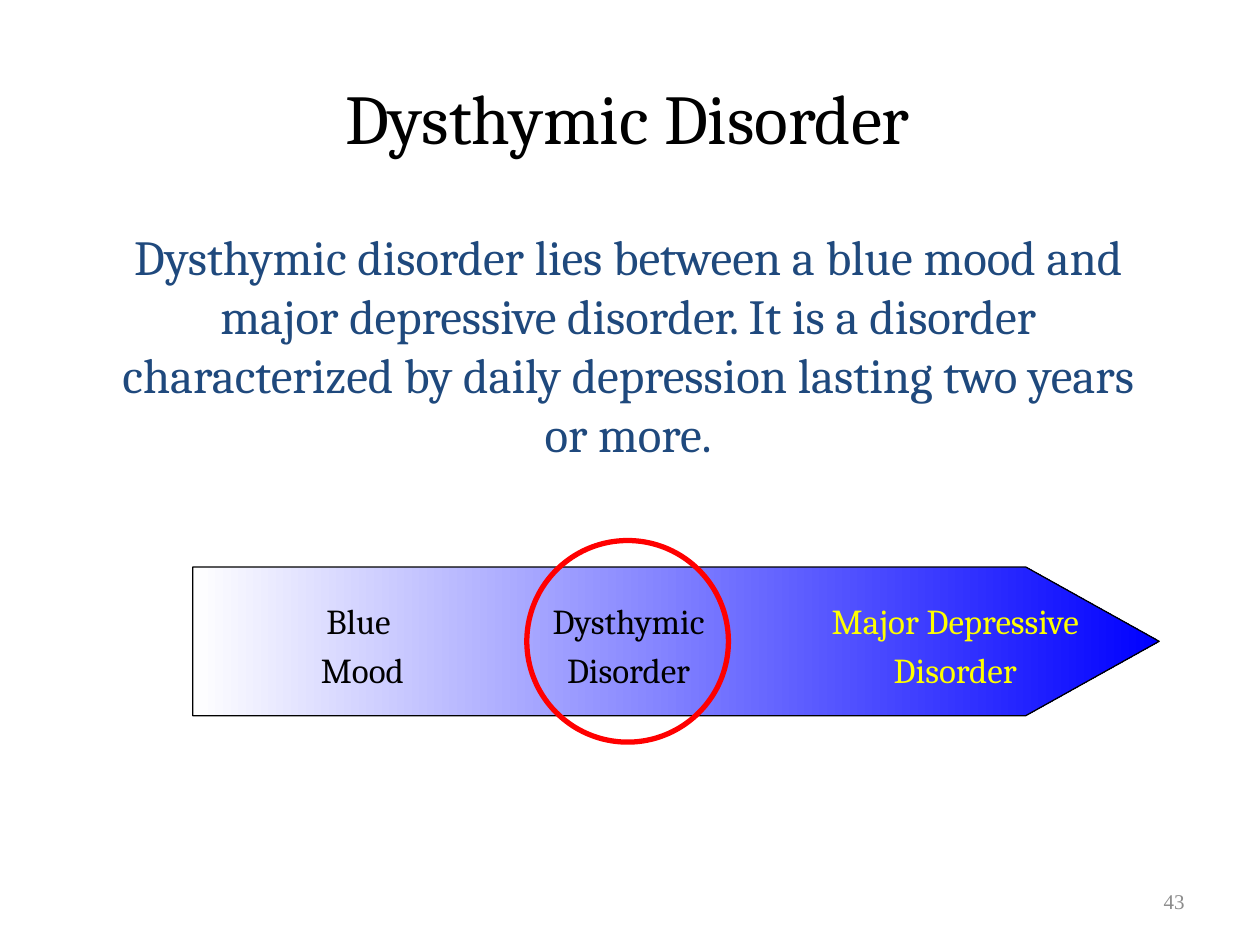
from pptx import Presentation
from pptx.dml.color import RGBColor
from pptx.enum.shapes import MSO_SHAPE
from pptx.enum.text import MSO_ANCHOR, MSO_AUTO_SIZE, PP_ALIGN
from pptx.oxml.ns import qn
from pptx.util import Inches, Pt

BLACK = RGBColor(0x00, 0x00, 0x00)
WHITE = RGBColor(0xFF, 0xFF, 0xFF)
NAVY = RGBColor(0x1F, 0x49, 0x7D)
BLUE = RGBColor(0x00, 0x00, 0xFF)
YELLOW = RGBColor(0xFF, 0xFF, 0x00)
RED = RGBColor(0xFF, 0x00, 0x00)
GRAY = RGBColor(0x8C, 0x8C, 0x8C)

# Stage label: lines, left and width as shares of the arrow, colour
STAGES = [
    (["Blue ", "Mood"], 0.094, 0.163, BLACK),
    (["Dysthymic", "Disorder"], 0.313, 0.276, BLACK),
    (["Major Depressive", "Disorder"], 0.615, 0.348, YELLOW),
]


def place(sp, box):
    sp.left, sp.top, sp.width, sp.height = (Inches(v) for v in box)


def write(sp, lines, size, color, align=PP_ALIGN.CENTER, font="Cambria",
          anchor=MSO_ANCHOR.MIDDLE, before=0):
    """Fill a shape with equally formatted paragraphs."""
    tf = sp.text_frame
    tf.word_wrap = True
    tf.auto_size = MSO_AUTO_SIZE.NONE
    tf.vertical_anchor = anchor
    tf.text = "\n".join(lines)
    for p in tf.paragraphs:
        p.alignment = align
        p.space_before = Pt(before)
        p.font.name = font
        p.font.size = Pt(size)
        p.font.color.rgb = color


def add_title(slide, box):
    title = slide.shapes.title
    place(title, box)
    write(title, ["Dysthymic Disorder"], 40, BLACK)


def add_definition(slide, box):
    body = slide.placeholders[1]
    place(body, box)
    write(body, ["Dysthymic disorder lies between a blue mood and major "
                 "depressive disorder. It is a disorder characterized by "
                 "daily depression lasting two years or more."],
          28, NAVY, anchor=MSO_ANCHOR.TOP)
    pPr = body.text_frame.paragraphs[0]._p.get_or_add_pPr()
    pPr.set("marL", "0")
    pPr.set("indent", "0")
    pPr.insert_element_before(pPr.makeelement(qn("a:buNone"), {}),
                              "a:tabLst", "a:defRPr", "a:extLst")


def add_severity_arrow(slide, box):
    """Gradient arrow with its stage labels and a ring on the middle one."""
    left, top, width, height = box
    arrow = slide.shapes.add_shape(MSO_SHAPE.PENTAGON, 0, 0, 0, 0)
    place(arrow, box)
    arrow.adjustments[0] = 0.897
    arrow.shadow.inherit = False
    arrow.fill.gradient()
    arrow.fill.gradient_angle = 0
    for stop, position, color in zip(arrow.fill.gradient_stops,
                                     (0, 1), (WHITE, BLUE)):
        stop.position = position
        stop.color.rgb = color
    arrow.line.color.rgb = BLACK
    arrow.line.width = Pt(0.75)

    for lines, x, w, color in STAGES:
        label = slide.shapes.add_textbox(0, 0, 0, 0)
        place(label, (left + x * width, top + 0.1 * height,
                      w * width, 0.85 * height))
        write(label, lines, 20, color, before=4)

    diameter = 1.6
    ring = slide.shapes.add_shape(MSO_SHAPE.OVAL, 0, 0, 0, 0)
    place(ring, (left + 0.45 * width - diameter / 2,
                 top + (height - diameter) / 2, diameter, diameter))
    ring.shadow.inherit = False
    ring.fill.background()
    ring.line.color.rgb = RED
    ring.line.width = Pt(3)


def add_page_number(slide, box):
    number = slide.shapes.add_textbox(0, 0, 0, 0)
    place(number, box)
    write(number, ["43"], 12, GRAY, PP_ALIGN.RIGHT, "Times New Roman")


def main():
    prs = Presentation()
    prs.slide_width, prs.slide_height = Inches(10), Inches(7.5)
    slide = prs.slides.add_slide(prs.slide_layouts[1])
    add_title(slide, (0.73, 0.3, 8.5, 1.25))
    add_definition(slide, (0.72, 1.75, 8.53, 2.25))
    add_severity_arrow(slide, (1.53, 4.5, 7.67, 1.18))
    add_page_number(slide, (7.17, 6.95, 2.33, 0.4))
    prs.save("out.pptx")


if __name__ == "__main__":
    main()
